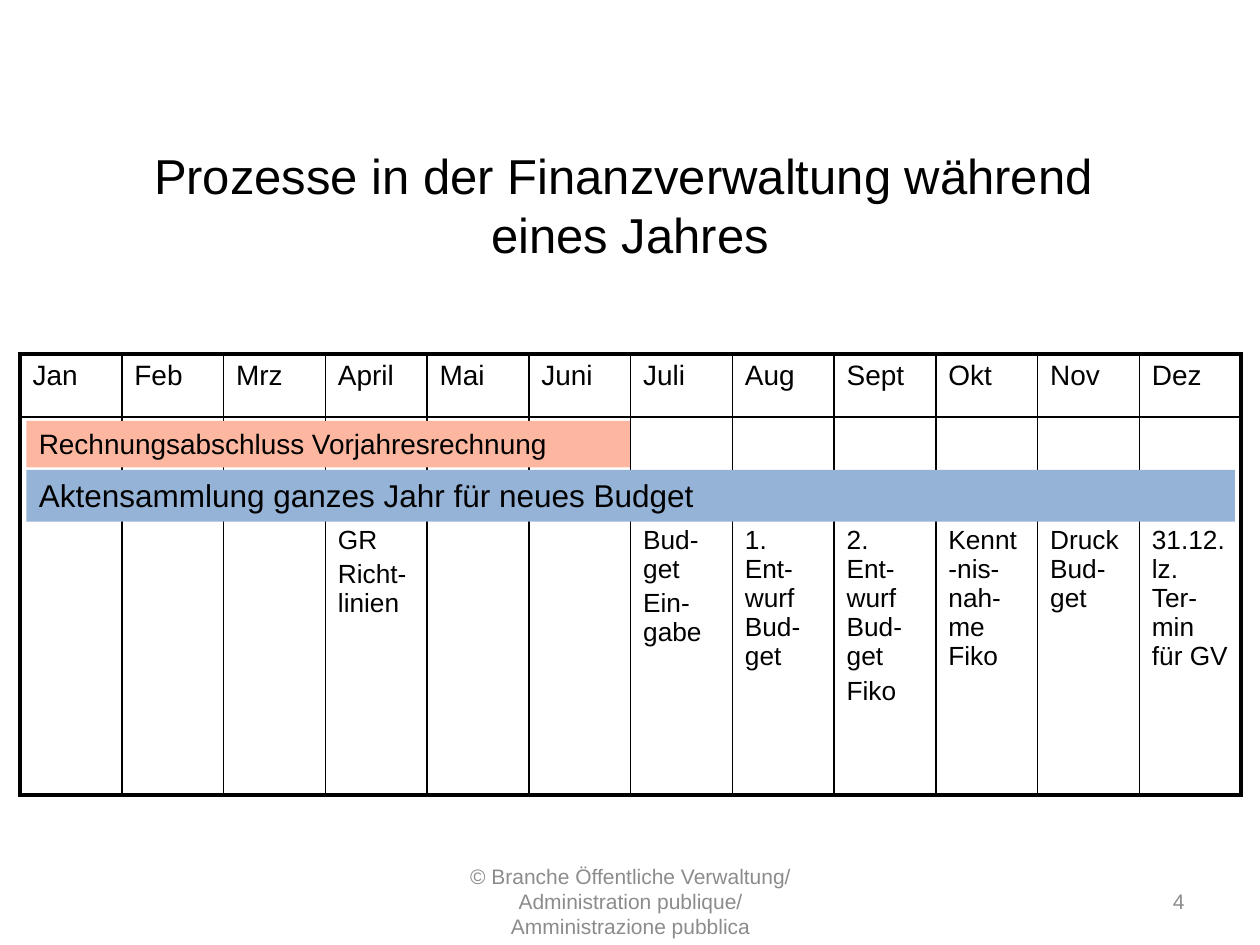
from lxml import etree
from pptx import Presentation
from pptx.dml.color import RGBColor
from pptx.enum import shapes, text
from pptx.oxml import ns
from pptx.util import Inches, Pt

BLACK = RGBColor(0x00, 0x00, 0x00)
WHITE = RGBColor(0xFF, 0xFF, 0xFF)
GREY = RGBColor(0x8C, 0x8C, 0x8C)
BLUE = RGBColor(0x95, 0xB3, 0xD7)
SALMON = RGBColor(0xFD, 0xB7, 0xA1)

LEFT, CENTER, RIGHT = text.PP_ALIGN.LEFT, text.PP_ALIGN.CENTER, text.PP_ALIGN.RIGHT
THIN, THICK = Pt(1), Pt(2.25)

CALENDAR = [
    ("Jan", []),
    ("Feb", []),
    ("Mrz", []),
    ("April", ["GR", "Richt-linien"]),
    ("Mai", []),
    ("Juni", []),
    ("Juli", ["Bud-get", "Ein-gabe"]),
    ("Aug", ["1. Ent-wurf Bud-get"]),
    ("Sept", ["2. Ent-wurf Bud-get", "Fiko"]),
    ("Okt", ["Kennt-nis-nah-me Fiko"]),
    ("Nov", ["Druck Bud-get"]),
    ("Dez", ["31.12. lz. Ter-min für GV"]),
]


class SlideBuilder:
    def __init__(self, slide, font="Arial"):
        self.slide = slide
        self.font = font

    def set_lines(self, tf, lines, size, color=BLACK, align=LEFT):
        """Fill a text frame with one paragraph per line."""
        tf.word_wrap = True
        for i, line in enumerate(lines):
            p = tf.paragraphs[0] if i == 0 else tf.add_paragraph()
            p.text = line
            p.alignment = align
            if i:
                p.space_before = Pt(3)
            p.font.name = self.font
            p.font.size = Pt(size)
            p.font.color.rgb = color

    def label(self, line, x, y, w, h, size, color, align):
        box = self.slide.shapes.add_textbox(Inches(x), Inches(y), Inches(w), Inches(h))
        tf = box.text_frame
        tf.vertical_anchor = text.MSO_ANCHOR.MIDDLE
        self.set_lines(tf, [line], size, color, align)

    def bar(self, line, x, y, w, h, size, fill):
        s = self.slide.shapes.add_shape(
            shapes.MSO_SHAPE.RECTANGLE, Inches(x), Inches(y), Inches(w), Inches(h))
        s.shadow.inherit = False
        s.fill.solid()
        s.fill.fore_color.rgb = fill
        s.line.fill.background()
        s.text_frame.vertical_anchor = text.MSO_ANCHOR.TOP
        self.set_lines(s.text_frame, [line], size)

    def borders(self, cell, widths):
        """Draw black cell borders; widths are left, right, top, bottom."""
        tc_pr = cell._tc.get_or_add_tcPr()
        for i, (side, width) in enumerate(zip("LRTB", widths)):
            ln = etree.Element(ns.qn(f"a:ln{side}"), w=str(width))
            fill = etree.SubElement(ln, ns.qn("a:solidFill"))
            etree.SubElement(fill, ns.qn("a:srgbClr"), val=str(BLACK))
            tc_pr.insert(i, ln)

    def calendar(self, months, x, y, w, row_heights):
        n = len(months)
        table = self.slide.shapes.add_table(
            2, n, Inches(x), Inches(y), Inches(w), Inches(sum(row_heights))).table
        table.first_row = table.horz_banding = False
        for row, height in zip(table.rows, row_heights):
            row.height = Inches(height)
        for col, (month, tasks) in enumerate(months):
            table.columns[col].width = Inches(w / n)
            left = THIN if col else THICK
            right = THIN if col < n - 1 else THICK
            head, body = table.cell(0, col), table.cell(1, col)
            for cell, top, bottom in ((head, THICK, THIN), (body, THIN, THICK)):
                cell.fill.solid()
                cell.fill.fore_color.rgb = WHITE
                self.borders(cell, (left, right, top, bottom))
            self.set_lines(head.text_frame, [month], 16)
            body.margin_top = Inches(0.86)  # keeps tasks below the two bars
            self.set_lines(body.text_frame, tasks, 15)


def main():
    prs = Presentation()
    prs.slide_width, prs.slide_height = Inches(10), Inches(7.5)
    b = SlideBuilder(prs.slides.add_slide(prs.slide_layouts[6]))

    b.label("Prozesse in der Finanzverwaltung während \veines Jahres",
            0.5, 0.84, 9, 1.57, 28, BLACK, CENTER)
    b.label("4", 7.17, 6.95, 2.33, 0.4, 12, GREY, RIGHT)
    b.label("© Branche Öffentliche Verwaltung/ Administration publique/ "
            "Amministrazione pubblica", 3.42, 6.95, 3.17, 0.4, 12, GREY, CENTER)
    b.calendar(CALENDAR, 0.16, 2.81, 9.69, (0.5, 3))
    b.bar("Aktensammlung ganzes Jahr für neues Budget", 0.21, 3.73, 9.59, 0.41, 18, BLUE)
    b.bar("Rechnungsabschluss Vorjahresrechnung", 0.21, 3.34, 4.79, 0.37, 16, SALMON)

    prs.save("out.pptx")


if __name__ == "__main__":
    main()
